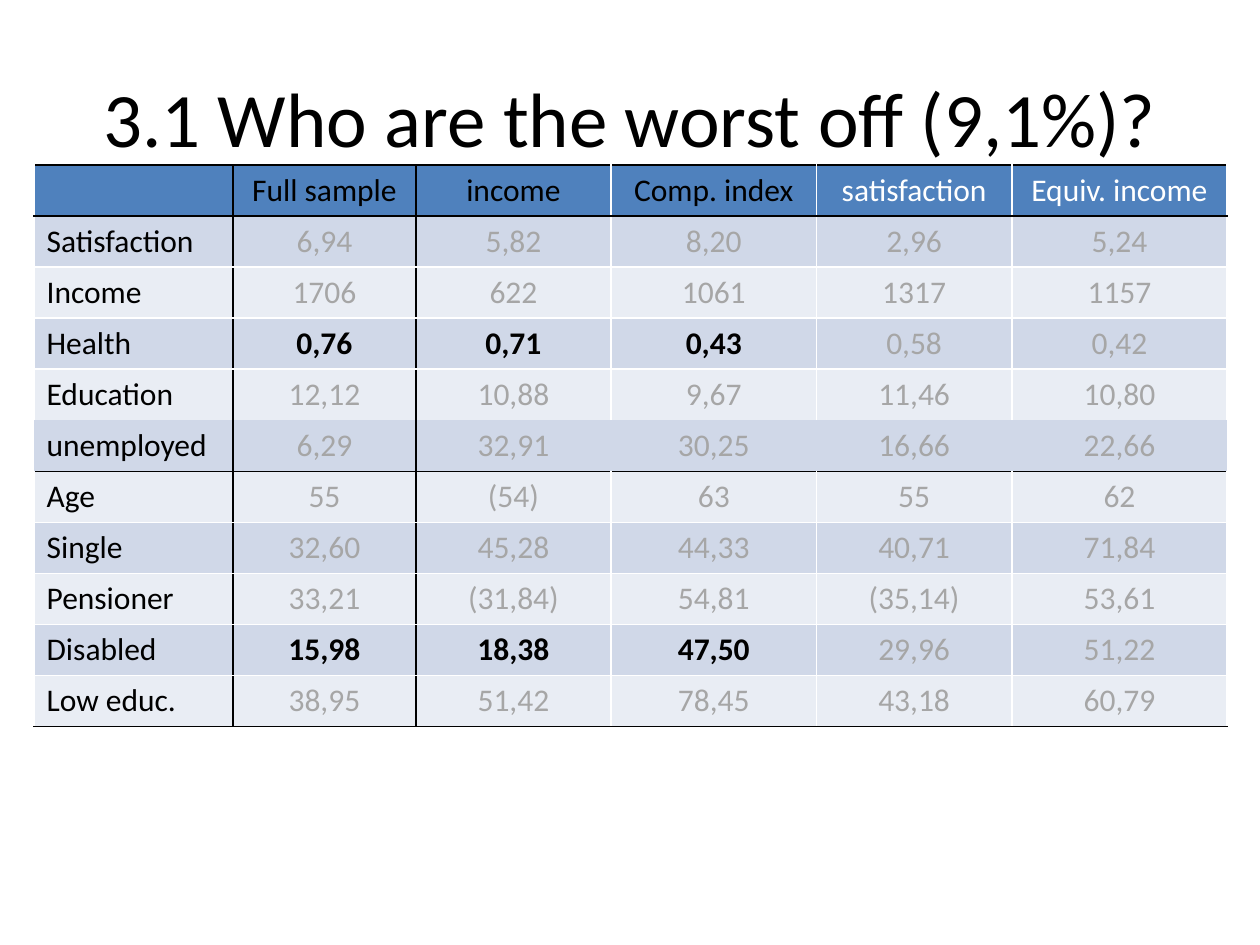
from dataclasses import dataclass

from lxml import etree
from pptx import Presentation
from pptx.dml.color import RGBColor
from pptx.enum.text import MSO_ANCHOR, PP_ALIGN
from pptx.oxml.ns import qn
from pptx.util import Inches, Pt

LEFT, CENTER = PP_ALIGN.LEFT, PP_ALIGN.CENTER
MIDDLE = MSO_ANCHOR.MIDDLE


@dataclass(frozen=True)
class Theme:
    """Colours, font and type sizes of the slide."""
    font: str = "Calibri"
    ink: str = "000000"
    paper: str = "FFFFFF"
    muted: str = "A6A6A6"
    header: str = "4F81BD"
    bands: tuple = ("E9EDF4", "D0D8E8")
    title_size: int = 44
    table_size: int = 18
    line_width: int = 1


THEME = Theme()
TITLE = "3.1 Who are the worst off (9,1%)?"
TITLE_BOX = (0.5, 0.3, 9, 1.25)
TABLE_BOX = (0.27, 1.31, 9.45, 4.46)
COLUMN_WIDTHS = (1.58, 1.45, 1.55, 1.63, 1.55, 1.71)
ROWS = (
    ("", "Full sample", "income", "Comp. index", "satisfaction", "Equiv. income"),
    ("Satisfaction", "6,94", "5,82", "8,20", "2,96", "5,24"),
    ("Income", "1706", "622", "1061", "1317", "1157"),
    ("Health", "0,76", "0,71", "0,43", "0,58", "0,42"),
    ("Education", "12,12", "10,88", "9,67", "11,46", "10,80"),
    ("unemployed", "6,29", "32,91", "30,25", "16,66", "22,66"),
    ("Age", "55", "(54)", "63", "55", "62"),
    ("Single", "32,60", "45,28", "44,33", "40,71", "71,84"),
    ("Pensioner", "33,21", "(31,84)", "54,81", "(35,14)", "53,61"),
    ("Disabled", "15,98", "18,38", "47,50", "29,96", "51,22"),
    ("Low educ.", "38,95", "51,42", "78,45", "43,18", "60,79"),
)
EMPHASIZED_ROWS = ("Health", "Disabled")
LAST_EMPHASIZED_COLUMN = 3
OPEN_ROW = 5
BLACK_ROW_LINES = (0, 1, 6, len(ROWS))
BLACK_COLUMN_LINES = (1, 2)


def write(para, text, size, color, align, bold=False):
    """Add one styled run to a paragraph."""
    para.alignment = align
    span = para.add_run()
    span.text = text
    span.font.name = THEME.font
    span.font.size = Pt(size)
    span.font.bold = bold
    span.font.color.rgb = RGBColor.from_string(color)


def add_title(page, box):
    """Place the centred slide title in the box."""
    frame = page.shapes.add_textbox(*map(Inches, box)).text_frame
    frame.word_wrap = True
    frame.vertical_anchor = MIDDLE
    write(frame.paragraphs[0], TITLE, THEME.title_size, THEME.ink, CENTER)


def row_line_color(line):
    """Return the colour of a horizontal rule, or None above the open row."""
    if line in BLACK_ROW_LINES:
        return THEME.ink
    return None if line == OPEN_ROW else THEME.paper


def column_line_color(line, row):
    """Return the colour of a vertical rule, or None inside the open row."""
    if line in BLACK_COLUMN_LINES:
        return THEME.ink
    return None if row == OPEN_ROW else THEME.paper


def set_borders(cell, row, column):
    """Draw the four rules around a cell."""
    edges = (
        ("a:lnL", column_line_color(column, row)),
        ("a:lnR", column_line_color(column + 1, row)),
        ("a:lnT", row_line_color(row)),
        ("a:lnB", row_line_color(row + 1)),
    )
    properties = cell._tc.get_or_add_tcPr()
    for tag, color in edges:
        line = etree.SubElement(properties, qn(tag), w=str(Pt(THEME.line_width)))
        if color is None:
            etree.SubElement(line, qn("a:noFill"))
        else:
            fill = etree.SubElement(line, qn("a:solidFill"))
            etree.SubElement(fill, qn("a:srgbClr"), val=color)


def text_style(row, column):
    """Return the text colour and weight of a cell."""
    if row == 0:
        return (THEME.ink if column <= LAST_EMPHASIZED_COLUMN else THEME.paper), False
    if column == 0:
        return THEME.ink, False
    if ROWS[row][0] in EMPHASIZED_ROWS and column <= LAST_EMPHASIZED_COLUMN:
        return THEME.ink, True
    return THEME.muted, False


def fill_cell(cell, row, column):
    """Set the rules, fill and text of a cell."""
    set_borders(cell, row, column)
    cell.fill.solid()
    color = THEME.bands[row % 2] if row else THEME.header
    cell.fill.fore_color.rgb = RGBColor.from_string(color)
    text_color, bold = text_style(row, column)
    align = CENTER if column else LEFT
    write(cell.text_frame.paragraphs[0], ROWS[row][column],
          THEME.table_size, text_color, align, bold)


def add_comparison_table(page, box):
    """Place the table of groups in the box."""
    table = page.shapes.add_table(
        len(ROWS), len(COLUMN_WIDTHS), *map(Inches, box)).table
    for column, width in zip(table.columns, COLUMN_WIDTHS):
        column.width = Inches(width)
    for row_index, row in enumerate(table.rows):
        row.height = Inches(box[3] / len(ROWS))
        for column_index, cell in enumerate(row.cells):
            fill_cell(cell, row_index, column_index)


def main():
    """Build and save the slide."""
    deck = Presentation()
    deck.slide_width, deck.slide_height = Inches(10), Inches(7.5)
    page = deck.slides.add_slide(deck.slide_layouts[6])
    add_title(page, TITLE_BOX)
    add_comparison_table(page, TABLE_BOX)
    deck.save("out.pptx")


if __name__ == "__main__":
    main()
